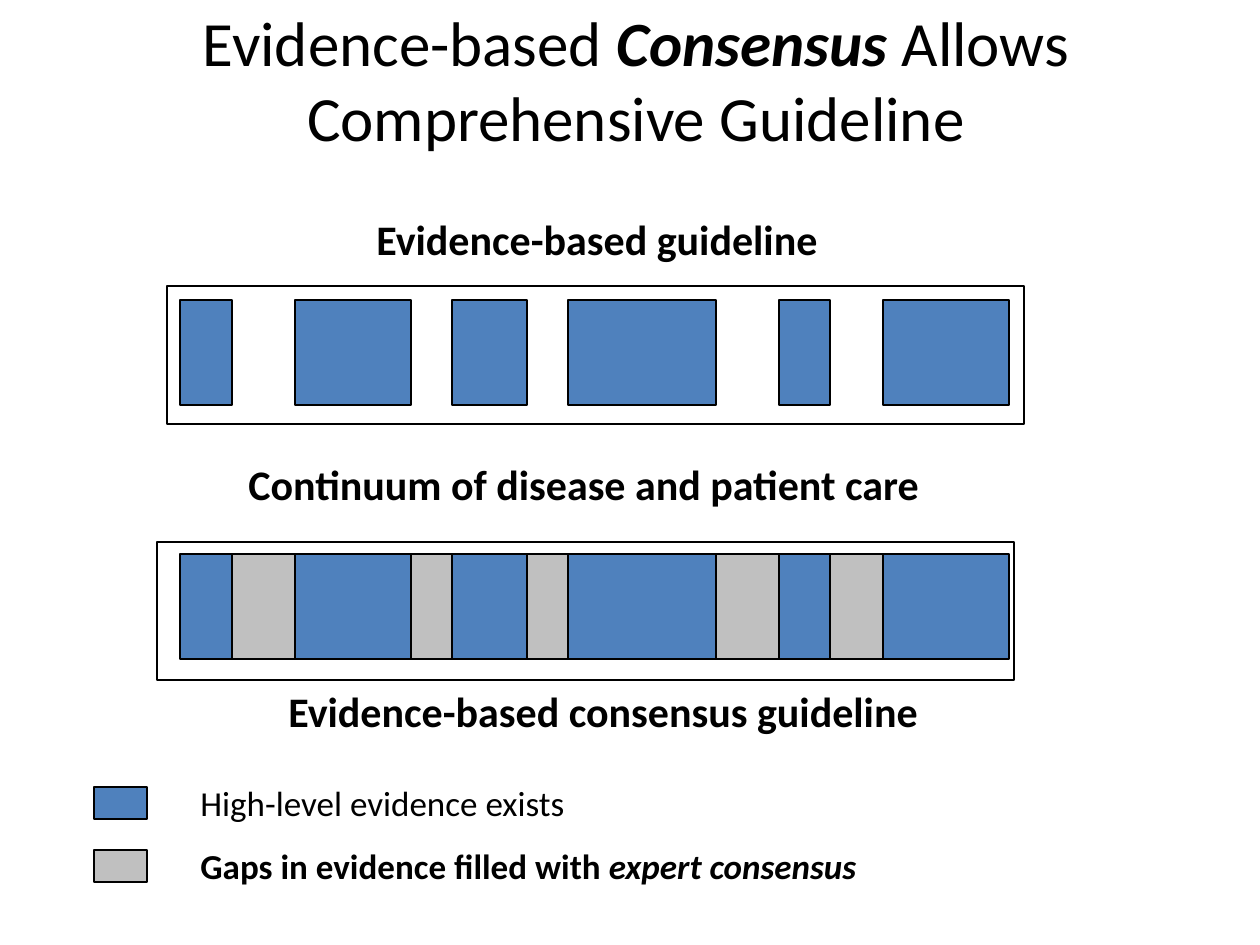
from itertools import pairwise

from pptx import Presentation
from pptx.dml.color import RGBColor
from pptx.enum.shapes import MSO_SHAPE
from pptx.enum.text import MSO_ANCHOR, MSO_AUTO_SIZE, PP_ALIGN
from pptx.util import Emu, Pt

PX_PER_INCH = 126
COLOURS = {"evidence": "4F81BD", "consensus": "C0C0C0", "ink": "000000"}

# Edges of the alternating evidence and gap segments along the continuum
SEGMENT_EDGES = [180, 232, 295, 411, 452, 527, 568, 716, 779, 830, 883, 1009]
SEGMENT_HEIGHT = 105


def px(length):
    return Emu(round(length * 914400 / PX_PER_INCH))


def colour(name):
    return RGBColor.from_string(COLOURS[name])


class GuidelineSlide:
    """Holds the style and the slide being drawn."""

    font_name = "Calibri"

    def __init__(self, presentation):
        self.slide = presentation.slides.add_slide(presentation.slide_layouts[5])

    def set_runs(self, paragraph, runs, size):
        """Fill a paragraph from (text, bold, italic) runs."""
        font = paragraph.font
        font.name, font.size = self.font_name, Pt(size)
        font.color.rgb = colour("ink")
        if len({bold for _, bold, _ in runs}) == 1:
            font.bold = runs[0][1]
        for text, bold, italic in runs:
            run = paragraph.add_run()
            run.text = text
            if font.bold is None:
                run.font.bold = bold
            if italic:
                run.font.italic = True

    def title(self, runs, left, top, width, height):
        heading = self.slide.shapes.title
        heading.left, heading.top = px(left), px(top)
        heading.width, heading.height = px(width), px(height)
        frame = heading.text_frame
        frame.auto_size = MSO_AUTO_SIZE.NONE
        frame.vertical_anchor = MSO_ANCHOR.MIDDLE
        frame.paragraphs[0].alignment = PP_ALIGN.CENTER
        self.set_runs(frame.paragraphs[0], runs, 36)

    def label(self, runs, left, top, width, height, size=24):
        box = self.slide.shapes.add_textbox(px(left), px(top), px(width), px(height))
        frame = box.text_frame
        frame.word_wrap = False
        frame.auto_size = MSO_AUTO_SIZE.SHAPE_TO_FIT_TEXT
        self.set_runs(frame.paragraphs[0], runs, size)

    def block(self, left, top, width, height, fill=None, line_width=0.75):
        rectangle = self.slide.shapes.add_shape(
            MSO_SHAPE.RECTANGLE, px(left), px(top), px(width), px(height))
        rectangle.shadow.inherit = False
        if fill:
            rectangle.fill.solid()
            rectangle.fill.fore_color.rgb = colour(fill)
        else:
            rectangle.fill.background()
        rectangle.line.color.rgb = colour("ink")
        rectangle.line.width = Pt(line_width)

    def continuum(self, top, frame_left, frame_top, fill_gaps):
        for index, (left, right) in enumerate(pairwise(SEGMENT_EDGES)):
            is_gap = index % 2 == 1
            if fill_gaps or not is_gap:
                self.block(left, top, right - left, SEGMENT_HEIGHT,
                           "consensus" if is_gap else "evidence")
        self.block(frame_left, frame_top, 857, 138, line_width=1.5)

    def legend_entry(self, top, fill, runs, text_width):
        self.block(94, top, 53, 32, fill)
        self.label(runs, 188, top - 12, text_width, 55, size=20)


def main():
    presentation = Presentation()
    presentation.slide_width, presentation.slide_height = px(1260), px(945)
    page = GuidelineSlide(presentation)

    page.title([("Evidence-based ", False, False), ("Consensus", True, True),
                (" Allows Comprehensive Guideline", False, False)], 69, 0, 1134, 158)

    page.continuum(300, 167, 286, fill_gaps=False)
    page.continuum(554, 157, 542, fill_gaps=True)

    page.label([("Evidence-based guideline", True, False)], 364, 207, 471, 63)
    page.label([("Continuum of disease and patient care", True, False)], 236, 452, 703, 63)
    page.label([("Evidence-based consensus guideline", True, False)], 276, 679, 661, 63)

    page.legend_entry(787, "evidence", [("High-level evidence exists", False, False)], 393)
    page.legend_entry(850, "consensus", [("Gaps in evidence filled with ", True, False),
                                         ("expert consensus", True, True)], 687)

    presentation.save("out.pptx")


if __name__ == "__main__":
    main()
